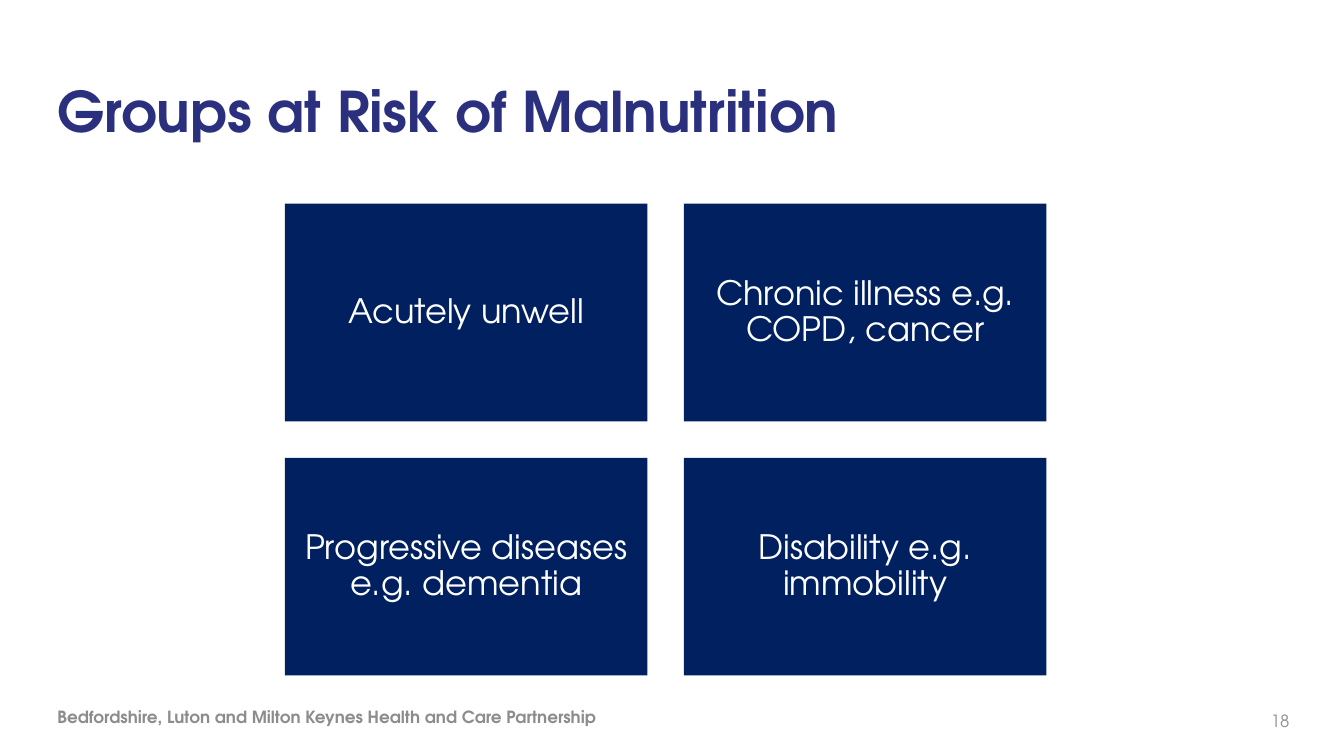
from dataclasses import dataclass

from pptx import Presentation
from pptx import util as u
from pptx.dml import color
from pptx.enum import shapes, text


@dataclass(frozen=True)
class Theme:
    """Hold the colours, font and type sizes of the slide."""
    font: str = "TeX Gyre Adventor"
    title: str = "2B307E"
    tile: str = "002060"
    tile_text: str = "FFFFFF"
    footer: str = "8C8C8C"
    title_size: int = 40
    tile_size: int = 24
    footer_size: int = 12


THEME = Theme()
GROUPS = [
    "Acutely unwell",
    "Chronic illness e.g. COPD, cancer",
    "Progressive diseases e.g. dementia",
    "Disability e.g. immobility",
]


def set_attrs(obj, values):
    """Set each named attribute of an object."""
    for name, value in values.items():
        setattr(obj, name, value)


def write(sp, words, size, colour, bold=False, inset=0, **para):
    """Write one vertically centred paragraph into a shape."""
    tf = sp.text_frame
    sides = ("left", "top", "right", "bottom")
    set_attrs(tf, {f"margin_{side}": u.Pt(inset) for side in sides})
    set_attrs(tf, {"word_wrap": True, "vertical_anchor": text.MSO_ANCHOR.MIDDLE})
    p = tf.paragraphs[0]
    set_attrs(p, para)
    r = p.add_run()
    r.text = words
    set_attrs(r.font, {"name": THEME.font, "size": u.Pt(size), "bold": bold})
    r.font.color.rgb = color.RGBColor.from_string(colour)


def add_text(s, box, *args, **kwargs):
    """Add a text box in the given box."""
    write(s.shapes.add_textbox(*map(u.Pt, box)), *args, **kwargs)


def add_title(s, box, words):
    """Add the slide title."""
    add_text(s, box, words, THEME.title_size, THEME.title, bold=True)


def add_tiles(s, box, labels, cols=2, gap=26):
    """Fill the box with an even grid of labelled tiles."""
    left, top, width, height = box
    rows = -(-len(labels) // cols)
    w = (width - gap * (cols - 1)) / cols
    h = (height - gap * (rows - 1)) / rows
    for i, label in enumerate(labels):
        row, col = divmod(i, cols)
        place = (left + col * (w + gap), top + row * (h + gap), w, h)
        sp = s.shapes.add_shape(shapes.MSO_SHAPE.RECTANGLE, *map(u.Pt, place))
        sp.shadow.inherit = False
        sp.fill.solid()
        sp.fill.fore_color.rgb = color.RGBColor.from_string(THEME.tile)
        sp.line.fill.background()
        write(sp, label, THEME.tile_size, THEME.tile_text, inset=7.2,
              alignment=text.PP_ALIGN.CENTER, line_spacing=0.9,
              space_after=u.Pt(0.35 * THEME.tile_size))


def add_footer(s, box, words, number):
    """Add the organisation at the left and the page number at the right."""
    left, top, width, height = box
    number_width = 38
    add_text(s, (left, top, 583, height), words, THEME.footer_size,
             THEME.footer, bold=True, space_after=u.Pt(6))
    add_text(s, (left + width - number_width, top + 3, number_width, height),
             number, THEME.footer_size, THEME.footer,
             alignment=text.PP_ALIGN.RIGHT, space_after=u.Pt(6))


def main():
    """Build and save the slide."""
    prs = Presentation()
    set_attrs(prs, {"slide_width": u.Pt(960), "slide_height": u.Pt(540)})
    s = prs.slides.add_slide(prs.slide_layouts[6])
    add_title(s, (41, 30, 694, 97), "Groups at Risk of Malnutrition")
    add_tiles(s, (203.5, 145.5, 544, 337), GROUPS)
    add_footer(s, (41, 497.5, 880, 29),
               "Bedfordshire, Luton and Milton Keynes Health and Care Partnership", "18")
    prs.save("out.pptx")


if __name__ == "__main__":
    main()
